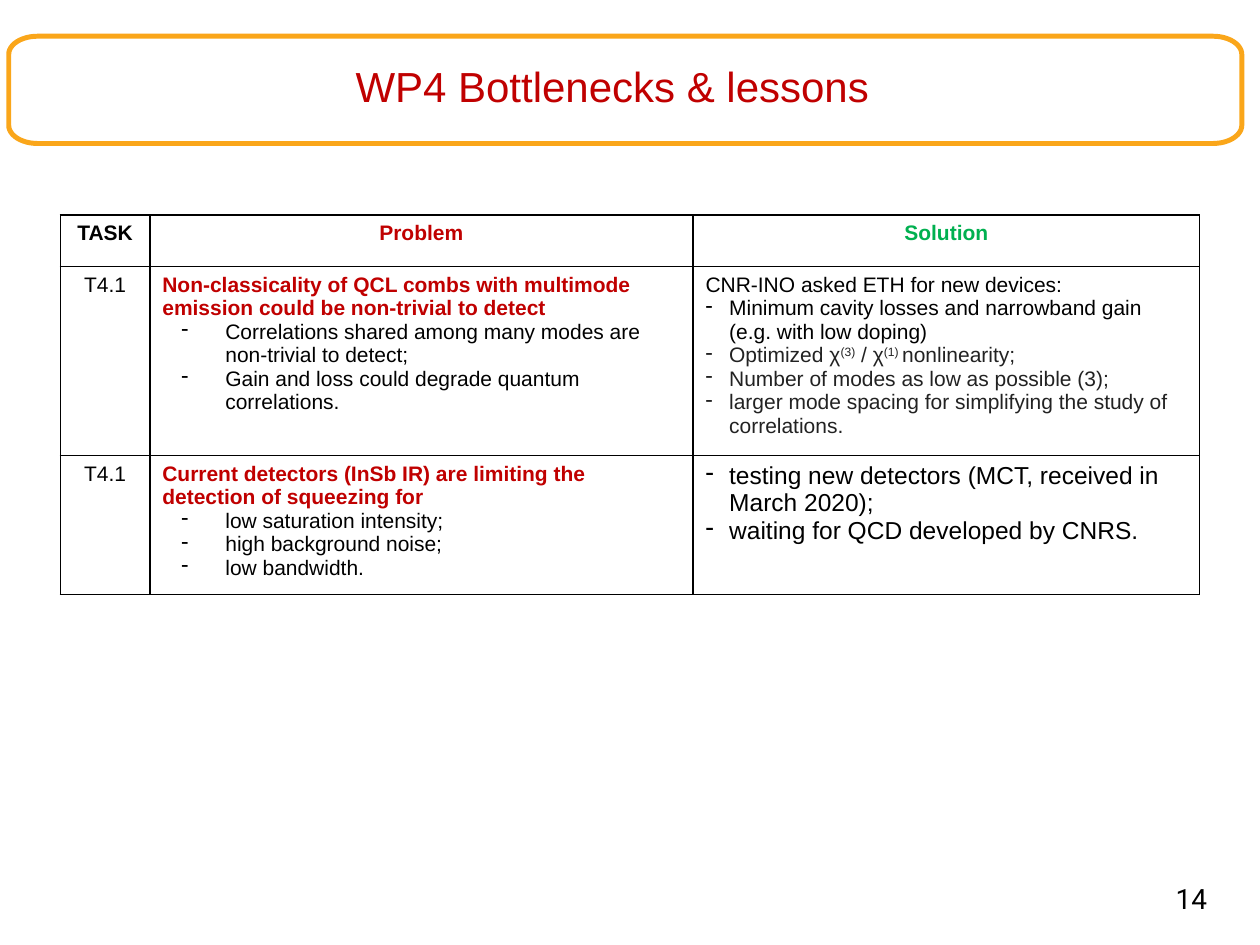
from math import cos, pi, sin

from lxml.etree import SubElement
from pptx import Presentation
from pptx.dml.color import RGBColor
from pptx.enum.text import MSO_ANCHOR, PP_ALIGN
from pptx.oxml.ns import qn
from pptx.util import Pt

COLORS = {
    "frame": "FAA61A",
    "red": "C00000",
    "green": "00B050",
    "black": "000000",
    "gray": "222222",
}
PROBLEM_INDENT = (36, -25.2)
SOLUTION_INDENT = (13.5, -13.5)


def add_run(paragraph, text, size, color="black", bold=False, font="Arial", baseline=0):
    run = paragraph.add_run()
    run.text = text
    run.font.size = Pt(size)
    run.font.name = font
    run.font.bold = bold
    run.font.color.rgb = RGBColor.from_string(COLORS[color])
    if baseline:
        run._r.get_or_add_rPr().set("baseline", str(baseline * 1000))


def set_dash(paragraph, indent):
    properties = paragraph._p.get_or_add_pPr()
    margin, first_line = indent
    properties.set("marL", str(Pt(margin)))
    properties.set("indent", str(Pt(first_line)))
    SubElement(properties, qn("a:buFontTx"))
    SubElement(properties, qn("a:buChar"), char="-")


def set_borders(cell):
    properties = cell._tc.get_or_add_tcPr()
    for position, side in enumerate(("lnL", "lnR", "lnT", "lnB")):
        line = properties.makeelement(qn(f"a:{side}"), {"w": str(Pt(1))})
        fill = SubElement(line, qn("a:solidFill"))
        SubElement(fill, qn("a:srgbClr"), val=COLORS["black"])
        properties.insert(position, line)


def add_text(slide, box, text, size, color, font, align, inset, wrap):
    textbox = slide.shapes.add_textbox(*map(Pt, box))
    frame = textbox.text_frame
    frame.word_wrap = wrap
    frame.margin_left = frame.margin_right = Pt(inset)
    frame.margin_top = frame.margin_bottom = Pt(inset)
    paragraph = frame.paragraphs[0]
    paragraph.alignment = align
    add_run(paragraph, text, size, color, font=font)
    return frame


def add_title_band(slide, left, top, width, height):
    # Frame with elliptical corners, traced clockwise from the right
    radius_x, radius_y, steps = 16.5, 10.4, 12
    right, bottom = left + width, top + height
    centers = [
        (right - radius_x, bottom - radius_y),
        (left + radius_x, bottom - radius_y),
        (left + radius_x, top + radius_y),
        (right - radius_x, top + radius_y),
    ]
    outline = []
    for quarter, (x, y) in enumerate(centers):
        for step in range(steps + 1):
            angle = (quarter + step / steps) * pi / 2
            outline.append((Pt(x + radius_x * cos(angle)), Pt(y + radius_y * sin(angle))))
    builder = slide.shapes.build_freeform(*outline[0])
    builder.add_line_segments(outline[1:], close=True)
    frame = builder.convert_to_shape()
    frame.shadow.inherit = False
    frame.fill.background()
    frame.line.color.rgb = RGBColor.from_string(COLORS["frame"])
    frame.line.width = Pt(2.83)

    # Title
    title = add_text(slide, (left + 121, top + 17.3, 447.8, 25.9),
                     "WP4 Bottlenecks & lessons", 24, "red", "Arial",
                     PP_ALIGN.CENTER, 0, True)
    title.vertical_anchor = MSO_ANCHOR.MIDDLE
    title.paragraphs[0].line_spacing = 0.9


def fill_centered(cell, text, color="black", bold=False):
    paragraph = cell.text_frame.paragraphs[0]
    paragraph.alignment = PP_ALIGN.CENTER
    add_run(paragraph, text, 12, color, bold)


def fill_list(cell, heading, items, indent, size=12, heading_color="black", bold=False):
    """Each item is a list of (text, color, baseline) runs."""
    frame = cell.text_frame
    paragraph = frame.paragraphs[0]
    if heading:
        add_run(paragraph, heading, size, heading_color, bold)
    for number, item in enumerate(items):
        if heading or number:
            paragraph = frame.add_paragraph()
        set_dash(paragraph, indent)
        for text, color, baseline in item:
            add_run(paragraph, text, size, color, baseline=baseline)


def plain(*texts, color="black"):
    return [[(text, color, 0)] for text in texts]


def add_task_table(slide, left, top, column_widths, row_heights):
    box = (left, top, sum(column_widths), sum(row_heights))
    table = slide.shapes.add_table(len(row_heights), len(column_widths),
                                   *map(Pt, box)).table
    table.first_row = table.horz_banding = False
    for column, width in zip(table.columns, column_widths):
        column.width = Pt(width)
    for row, height in zip(table.rows, row_heights):
        row.height = Pt(height)
    for cell in table.iter_cells():
        cell.fill.background()
        set_borders(cell)

    # Header
    headers = [("TASK", "black"), ("Problem", "red"), ("Solution", "green")]
    for column, (text, color) in enumerate(headers):
        fill_centered(table.cell(0, column), text, color, bold=True)

    # Tasks
    susceptibility = [
        ("Optimized χ", "gray", 0), ("(3)", "gray", 30), (" / χ", "gray", 0),
        ("(1) ", "gray", 30), ("nonlinearity;", "gray", 0),
    ]
    tasks = [
        ("T4.1",
         "Non-classicality of QCL combs with multimode emission could be non-trivial to detect",
         plain("Correlations shared among many modes are non-trivial to detect;",
               "Gain and loss could degrade quantum correlations."),
         "CNR-INO asked ETH for new devices:",
         plain("Minimum cavity losses and narrowband gain (e.g. with low doping)")
         + [susceptibility]
         + plain("Number of modes as low as possible (3);",
                 "larger mode spacing for simplifying the study of correlations.",
                 color="gray"),
         12),
        ("T4.1",
         "Current detectors (InSb IR) are limiting the detection of squeezing for",
         plain("low saturation intensity;", "high background noise;", "low bandwidth."),
         None,
         plain("testing new detectors (MCT, received in March 2020);",
               "waiting for QCD developed by CNRS."),
         14),
    ]
    for row, (task, problem, causes, request, solutions, size) in enumerate(tasks, 1):
        fill_centered(table.cell(row, 0), task)
        fill_list(table.cell(row, 1), problem, causes, PROBLEM_INDENT,
                  heading_color="red", bold=True)
        fill_list(table.cell(row, 2), request, solutions, SOLUTION_INDENT, size)


def add_page_number(slide, left, top, width, height):
    add_text(slide, (left, top, width, height), "14", 16, "black", "Roboto",
             PP_ALIGN.RIGHT, 3.6, False)


def main():
    presentation = Presentation()
    presentation.slide_width, presentation.slide_height = Pt(720), Pt(540)
    slide = presentation.slides.add_slide(presentation.slide_layouts[6])
    add_title_band(slide, 5, 20.7, 704.6, 61.3)
    add_task_table(slide, 34.5, 123, (51.1, 310.4, 289.6), (29.4, 108, 79.2))
    add_page_number(slide, 525.6, 500.4, 167.8, 28.8)
    presentation.save("out.pptx")


if __name__ == "__main__":
    main()
